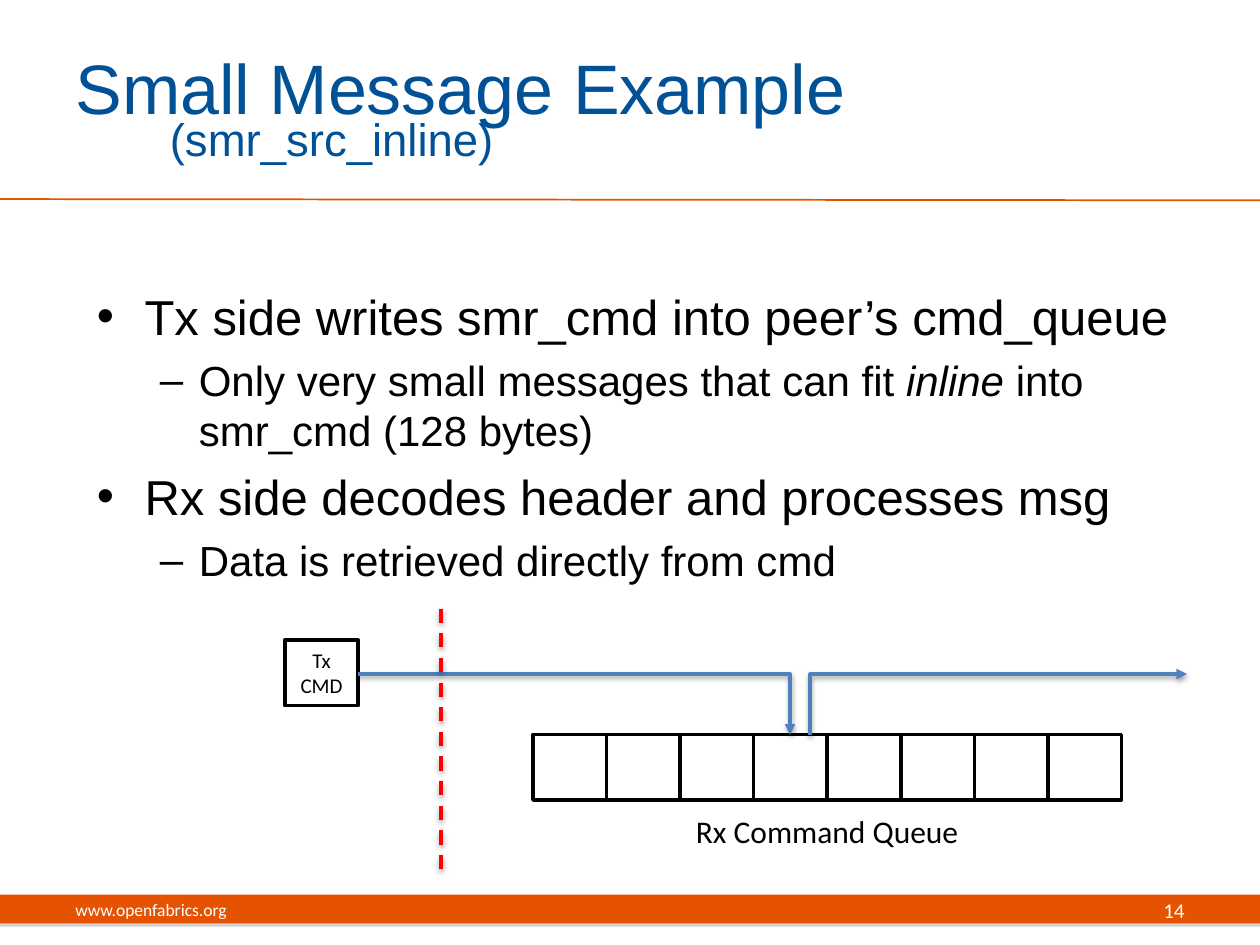
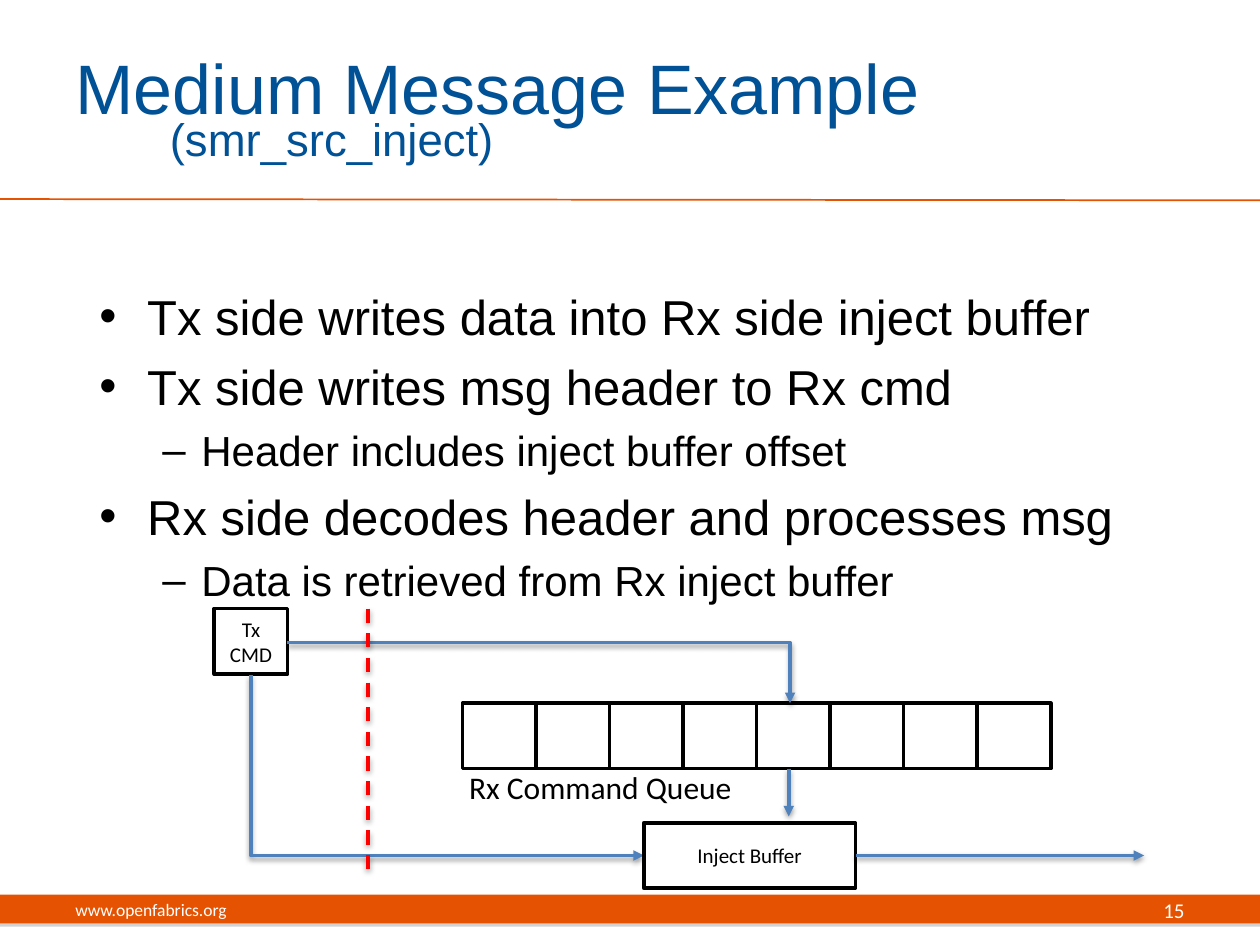
"""Build two slides explaining small and medium shared-memory messages."""
from typing import NamedTuple, Optional

from lxml import etree
from pptx import Presentation
from pptx.dml.color import RGBColor
from pptx.enum.dml import MSO_LINE
from pptx.enum.shapes import MSO_CONNECTOR, MSO_SHAPE
from pptx.enum.text import MSO_ANCHOR, PP_ALIGN
from pptx.oxml.ns import qn
from pptx.util import Inches, Pt

STRAIGHT = MSO_CONNECTOR.STRAIGHT
ELBOW = MSO_CONNECTOR.ELBOW
RECTANGLE = MSO_SHAPE.RECTANGLE
DASH = MSO_LINE.DASH
MIDDLE = MSO_ANCHOR.MIDDLE
LEFT, CENTER, RIGHT = PP_ALIGN.LEFT, PP_ALIGN.CENTER, PP_ALIGN.RIGHT
RIGHT_SIDE = 3

COLORS = {
    "title": "005195",
    "band": "E55302",
    "band_shadow": "808080",
    "arrow": "4F81BD",
    "divider": "FF0000",
    "ink": "000000",
    "paper": "FFFFFF",
}
QUEUE_WIDTH, QUEUE_CELLS = 4.67, 8
CELL_WIDTH, BOX_HEIGHT = QUEUE_WIDTH / QUEUE_CELLS, 0.52


class Area(NamedTuple):
    left: float
    top: float
    width: float
    height: float


class TextStyle(NamedTuple):
    font: str
    size: int
    color: str
    align: PP_ALIGN = LEFT


class BulletLevel(NamedTuple):
    mark: str
    margin: float
    hanging: float
    size: int
    space_before: float


class Bullet(NamedTuple):
    text: str
    level: int = 0


class Shadow(NamedTuple):
    color: str
    opacity: int
    blur: float
    distance: float


class Arrow(NamedTuple):
    x1: float
    y1: float
    x2: float
    y2: float


class MessageSlide(NamedTuple):
    title: str
    subtitle: str
    number: int
    body_left: float
    bullets: list[Bullet]
    queue_left: float
    queue_top: float
    queue_label: Area
    command_left: float
    command_top: float
    divider_x: float
    across_arrows: list[Arrow]
    upright_arrows: list[Arrow]
    straight_arrows: list[Arrow]
    inject_buffer: Optional[Area] = None
    receive_x: float = 0


TITLE = TextStyle("Arial", 40, "title")
SUBTITLE = TextStyle("Arial", 26, "title")
SITE = TextStyle("Calibri", 10, "paper")
NUMBER = TextStyle("Calibri", 12, "paper", RIGHT)
QUEUE_LABEL = TextStyle("Calibri", 18, "ink", CENTER)
BOX_LABEL = TextStyle("Calibri", 12, "ink", CENTER)
LEVELS = [BulletLevel("•", 0.38, 0.38, 28, 6.4), BulletLevel("–", 0.81, 0.31, 24, 5.5)]
LINE_SHADOW = Shadow("ink", 38, 3.1, 1.6)
BAND_SHADOW = Shadow("band_shadow", 35, 0, 1.8)

SLIDES = [
    MessageSlide(
        "Small Message Example", "(smr_src_inline)", 14, 0.67,
        [
            Bullet("Tx side writes smr_cmd into peer’s cmd_queue"),
            Bullet("Only very small messages that can fit *inline* into smr_cmd (128 bytes)", 1),
            Bullet("Rx side decodes header and processes msg"),
            Bullet("Data is retrieved directly from cmd", 1),
        ],
        4.23, 5.83, Area(4.23, 6.42, QUEUE_WIDTH, 0.35), 2.26, 5.08, 3.5,
        across_arrows=[Arrow(2.84, 5.35, 6.27, 5.83)],
        upright_arrows=[Arrow(6.43, 5.83, 9.42, 5.35)],
        straight_arrows=[],
    ),
    MessageSlide(
        "Medium Message Example", "(smr_src_inject)", 15, 0.69,
        [
            Bullet("Tx side writes data into Rx side inject buffer"),
            Bullet("Tx side writes msg header to Rx cmd"),
            Bullet("Header includes inject buffer offset", 1),
            Bullet("Rx side decodes header and processes msg"),
            Bullet("Data is retrieved from Rx inject buffer", 1),
        ],
        3.67, 5.58, Area(2.43, 6.07, QUEUE_WIDTH, 0.35), 1.7, 4.83, 2.92,
        across_arrows=[Arrow(2.28, 5.1, 6.27, 5.58)],
        upright_arrows=[Arrow(1.99, 5.36, 5.11, 6.79)],
        straight_arrows=[Arrow(6.26, 6.1, 6.26, 6.48)],
        inject_buffer=Area(5.11, 6.53, 1.68, BOX_HEIGHT),
        receive_x=9.08,
    ),
]


def rgb(name: str) -> RGBColor:
    """Look up a palette colour."""
    return RGBColor.from_string(COLORS[name])


def emu(lengths) -> list:
    """Turn numbers of inches into lengths."""
    return [Inches(length) for length in lengths]


def style_paragraph(paragraph, style: TextStyle) -> None:
    """Apply one text style to a paragraph."""
    paragraph.alignment = style.align
    paragraph.font.name = style.font
    paragraph.font.size = Pt(style.size)
    paragraph.font.color.rgb = rgb(style.color)


def write(shape, text: str, style: TextStyle) -> None:
    """Put one vertically centred, styled paragraph in a shape."""
    frame = shape.text_frame
    frame.word_wrap = True
    frame.vertical_anchor = MIDDLE
    frame.text = text
    style_paragraph(frame.paragraphs[0], style)


def add_label(slide, area: Area, text: str, style: TextStyle) -> None:
    """Add a text box holding one label."""
    write(slide.shapes.add_textbox(*emu(area)), text, style)


def add_shadow(shape, shadow: Shadow) -> None:
    """Give a shape or connector a shadow that falls straight down."""
    properties = shape.element.spPr
    effects = properties.find(qn("a:effectLst"))
    if effects is None:
        effects = etree.SubElement(properties, qn("a:effectLst"))
    outer = etree.SubElement(
        effects, qn("a:outerShdw"), blurRad=str(Pt(shadow.blur)),
        dist=str(Pt(shadow.distance)), dir="5400000", rotWithShape="0")
    color = etree.SubElement(outer, qn("a:srgbClr"), val=COLORS[shadow.color])
    etree.SubElement(color, qn("a:alpha"), val=str(shadow.opacity * 1000))


def add_box(slide, area: Area, text: str = ""):
    """Add a white box with a black outline and an optional label."""
    box = slide.shapes.add_shape(RECTANGLE, *emu(area))
    box.shadow.inherit = False
    box.fill.solid()
    box.fill.fore_color.rgb = rgb("paper")
    box.line.color.rgb = rgb("ink")
    box.line.width = Pt(2)
    if text:
        write(box, text, BOX_LABEL)
    return box


def add_line(slide, ends: Arrow, color: str, kind=STRAIGHT, width: float = 2):
    """Add a coloured connector without a shadow."""
    line = slide.shapes.add_connector(kind, *emu(ends))
    line.line.color.rgb = rgb(color)
    line.line.width = Pt(width)
    etree.SubElement(line.element.spPr, qn("a:effectLst"))
    return line


def add_arrow(slide, ends: Arrow, kind=STRAIGHT):
    """Add a shadowed arrow; an elbow has one corner, across first."""
    arrow = add_line(slide, ends, "arrow", kind)
    properties = arrow.element.spPr
    etree.SubElement(properties.find(qn("a:ln")), qn("a:tailEnd"), type="triangle")
    if kind == ELBOW:
        properties.find(qn("a:prstGeom")).set("prst", "bentConnector2")
    add_shadow(arrow, LINE_SHADOW)
    return arrow


def add_upright_arrow(slide, ends: Arrow) -> None:
    """Add an elbow arrow that goes up or down first, by turning an elbow."""
    center_x, center_y = (ends.x1 + ends.x2) / 2, (ends.y1 + ends.y2) / 2
    goes_up = ends.y2 < ends.y1
    sign = 1 if goes_up else -1
    half_width, half_height = (ends.x2 - ends.x1) / 2, (ends.y2 - ends.y1) / 2
    across, down = sign * half_height, -sign * half_width
    turned = Arrow(center_x - across, center_y - down, center_x + across, center_y + down)
    arrow = add_arrow(slide, turned, ELBOW)
    turn = 90 if goes_up else 270
    arrow.element.spPr.find(qn("a:xfrm")).set("rot", str(turn * 60000))


def add_bullets(slide, left: float, bullets: list[Bullet]) -> None:
    """Add the two-level bulleted text; asterisks enclose italics."""
    frame = slide.shapes.add_textbox(*emu((left, 2.17, 9, 5.08))).text_frame
    frame.word_wrap = True
    frame.margin_top = Inches(0.1)
    for index, bullet in enumerate(bullets):
        level = LEVELS[bullet.level]
        paragraph = frame.paragraphs[0] if index == 0 else frame.add_paragraph()
        paragraph.level = bullet.level
        paragraph.space_before = Pt(level.space_before if index else 0)
        properties = paragraph._p.get_or_add_pPr()
        properties.set("marL", str(Inches(level.margin)))
        properties.set("indent", str(-Inches(level.hanging)))
        etree.SubElement(properties, qn("a:buFont"), typeface="Arial")
        etree.SubElement(properties, qn("a:buChar"), char=level.mark)
        style_paragraph(paragraph, TextStyle("Arial", level.size, "ink"))
        for part, text in enumerate(bullet.text.split("*")):
            run = paragraph.add_run()
            run.text = text
            if part % 2:
                run.font.italic = True


def add_frame(slide, content: MessageSlide) -> None:
    """Add the title, rule, footer band and footer texts."""
    band = slide.shapes.add_shape(RECTANGLE, *emu((0, 7.1, 10, 0.23)))
    band.shadow.inherit = False
    band.fill.solid()
    band.fill.fore_color.rgb = rgb("band")
    band.line.fill.background()
    add_shadow(band, BAND_SHADOW)
    add_line(slide, Arrow(0, 1.58, 10, 1.59), "band", width=1)
    title = slide.shapes.title
    title.left, title.top, title.width, title.height = emu((0.5, 0.28, 8.17, 0.81))
    write(title, content.title, TITLE)
    add_label(slide, Area(1.25, 0.88, 8.17, 0.44), content.subtitle, SUBTITLE)
    add_label(slide, Area(0.5, 7.02, 3.17, 0.4), "www.openfabrics.org", SITE)
    add_label(slide, Area(7.17, 7.02, 2.33, 0.4), str(content.number), NUMBER)


def add_diagram(slide, content: MessageSlide) -> None:
    """Draw the command, the queue and the paths of the message."""
    for cell in range(QUEUE_CELLS):
        cell_left = content.queue_left + cell * CELL_WIDTH
        add_box(slide, Area(cell_left, content.queue_top, CELL_WIDTH, BOX_HEIGHT))
    add_label(slide, content.queue_label, "Rx Command Queue", QUEUE_LABEL)
    add_box(slide, Area(content.command_left, content.command_top, CELL_WIDTH, BOX_HEIGHT), "Tx CMD")
    for ends in content.across_arrows:
        add_arrow(slide, ends, ELBOW)
    for ends in content.upright_arrows:
        add_upright_arrow(slide, ends)
    for ends in content.straight_arrows:
        add_arrow(slide, ends)
    if content.inject_buffer:
        area = content.inject_buffer
        inject_buffer = add_box(slide, area, "Inject Buffer")
        middle = area.top + area.height / 2
        receive = add_arrow(slide, Arrow(area.left + area.width, middle, content.receive_x, middle))
        receive.begin_connect(inject_buffer, RIGHT_SIDE)
    divider = add_line(slide, Arrow(content.divider_x, 4.83, content.divider_x, 6.92), "divider")
    divider.line.dash_style = DASH
    add_shadow(divider, LINE_SHADOW)


def main() -> None:
    """Build and save the presentation."""
    presentation = Presentation()
    presentation.slide_width, presentation.slide_height = emu((10, 7.5))
    title_only = presentation.slide_layouts[5]
    for content in SLIDES:
        slide = presentation.slides.add_slide(title_only)
        add_frame(slide, content)
        add_bullets(slide, content.body_left, content.bullets)
        add_diagram(slide, content)
    presentation.save("out.pptx")


if __name__ == "__main__":
    main()
